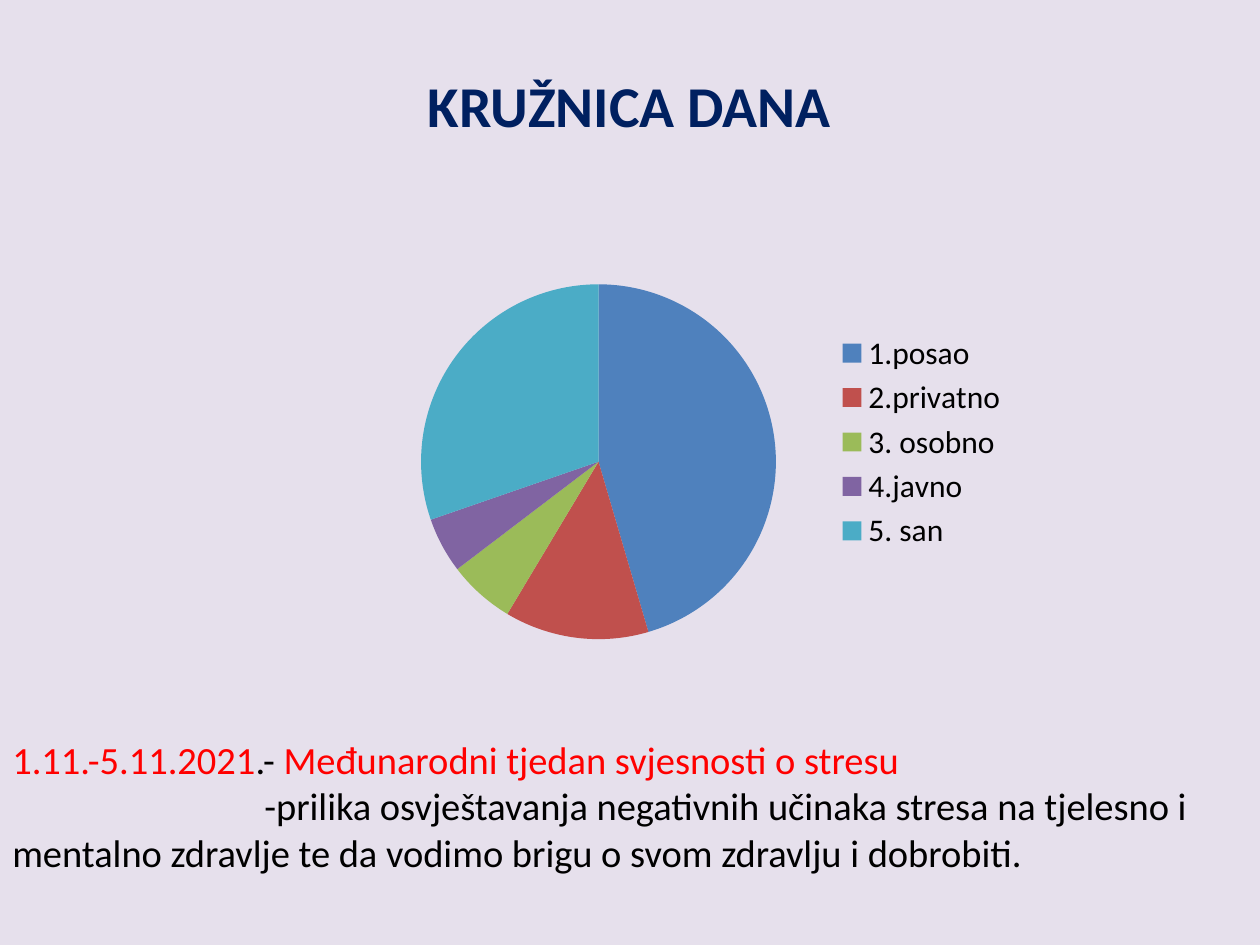
from dataclasses import dataclass

from lxml.etree import SubElement
from pptx import Presentation
from pptx.chart.data import CategoryChartData
from pptx.dml.color import RGBColor
from pptx.enum.chart import XL_CHART_TYPE, XL_LEGEND_POSITION
from pptx.enum.text import MSO_ANCHOR, MSO_AUTO_SIZE, PP_ALIGN
from pptx.oxml.ns import qn
from pptx.util import Emu, Pt

EMU_PER_PX = 914400 / 126
COLORS = {
    "background": "E6E0EC",
    "title": "002060",
    "highlight": "FF0000",
    "text": "000000",
}


@dataclass
class Box:
    left: int
    top: int
    width: int
    height: int


@dataclass
class Span:
    text: str
    color: str


@dataclass
class Para:
    spans: list[Span]
    first_indent: int = 0
    align: PP_ALIGN = PP_ALIGN.LEFT


@dataclass
class Slice:
    label: str
    hours: int
    color: str


SLICES = [
    Slice("1.posao", 45, "4F81BD"),
    Slice("2.privatno", 13, "C0504D"),
    Slice("3. osobno", 6, "9BBB59"),
    Slice("4.javno", 5, "8064A2"),
    Slice("5. san", 30, "4BACC6"),
]
TITLE = [Para([Span("KRUŽNICA DANA", "title")], align=PP_ALIGN.CENTER)]
NOTE = [
    Para([
        Span("1.11.-5.11.2021", "highlight"),
        Span(".- ", "text"),
        Span("Međunarodni tjedan svjesnosti o stresu", "highlight"),
    ]),
    Para([
        Span("-prilika osvještavanja negativnih učinaka stresa na tjelesno i "
             "mentalno zdravlje te da vodimo brigu o svom zdravlju i dobrobiti.", "text"),
    ], first_indent=252),
]


def px(length: int) -> Emu:
    return Emu(round(length * EMU_PER_PX))


def place(box: Box) -> tuple[Emu, Emu, Emu, Emu]:
    return px(box.left), px(box.top), px(box.width), px(box.height)


def style(target, formats: dict) -> None:
    for name, value in formats.items():
        setattr(target, name, value)


def add_text(slide, box: Box, paras: list[Para], frame_format: dict, font_format: dict) -> None:
    frame = slide.shapes.add_textbox(*place(box)).text_frame
    style(frame, {"word_wrap": True, **frame_format})
    for index, para in enumerate(paras):
        paragraph = frame.add_paragraph() if index else frame.paragraphs[0]
        paragraph.alignment = para.align
        if para.first_indent:
            properties = paragraph._p.get_or_add_pPr()
            properties.set("marL", "0")
            properties.set("indent", str(px(para.first_indent)))
        for span in para.spans:
            run = paragraph.add_run()
            run.text = span.text
            style(run.font, {"name": "Calibri", **font_format})
            run.font.color.rgb = RGBColor.from_string(COLORS[span.color])


def set_plot_layout(chart, layout: dict[str, str]) -> None:
    plot_area = chart._chartSpace.chart.plotArea
    for old in plot_area.findall(qn("c:layout")):
        plot_area.remove(old)
    holder = SubElement(plot_area, qn("c:layout"))
    plot_area.insert(0, holder)
    manual = SubElement(holder, qn("c:manualLayout"))
    for tag, value in layout.items():
        SubElement(manual, qn(f"c:{tag}")).set("val", value)


def add_pie(slide, box: Box, slices: list[Slice]) -> None:
    data = CategoryChartData()
    data.categories = [part.label for part in slices]
    data.add_series("Series 1", [part.hours for part in slices])
    chart = slide.shapes.add_chart(XL_CHART_TYPE.PIE, *place(box), data).chart
    style(chart, {"has_title": False, "has_legend": True})
    style(chart.font, {"name": "Calibri", "size": Pt(18)})
    chart.font.color.rgb = RGBColor.from_string(COLORS["text"])
    style(chart.legend, {"position": XL_LEGEND_POSITION.RIGHT, "include_in_layout": True})
    plot = chart.plots[0]
    plot.vary_by_categories = True
    for index, part in enumerate(slices):
        fill = plot.series[0].points[index].format.fill
        fill.solid()
        fill.fore_color.rgb = RGBColor.from_string(part.color)
    set_plot_layout(chart, {
        "layoutTarget": "inner", "xMode": "edge", "yMode": "edge",
        "x": "0.29", "y": "0.1", "w": "0.42", "h": "0.9",
    })


def main() -> None:
    deck = Presentation()
    style(deck, {"slide_width": px(1260), "slide_height": px(945)})
    page = deck.slides.add_slide(deck.slide_layouts[6])
    page.background.fill.solid()
    page.background.fill.fore_color.rgb = RGBColor.from_string(COLORS["background"])

    # Title
    add_text(page, Box(207, 53, 845, 103), TITLE,
             {"vertical_anchor": MSO_ANCHOR.MIDDLE}, {"size": Pt(33), "bold": True})

    # Pie of the day
    add_pie(page, Box(176, 244, 845, 396), SLICES)

    # Note on stress awareness week
    add_text(page, Box(0, 730, 1260, 152), NOTE,
             {"auto_size": MSO_AUTO_SIZE.SHAPE_TO_FIT_TEXT}, {"size": Pt(22)})

    deck.save("out.pptx")


if __name__ == "__main__":
    main()
